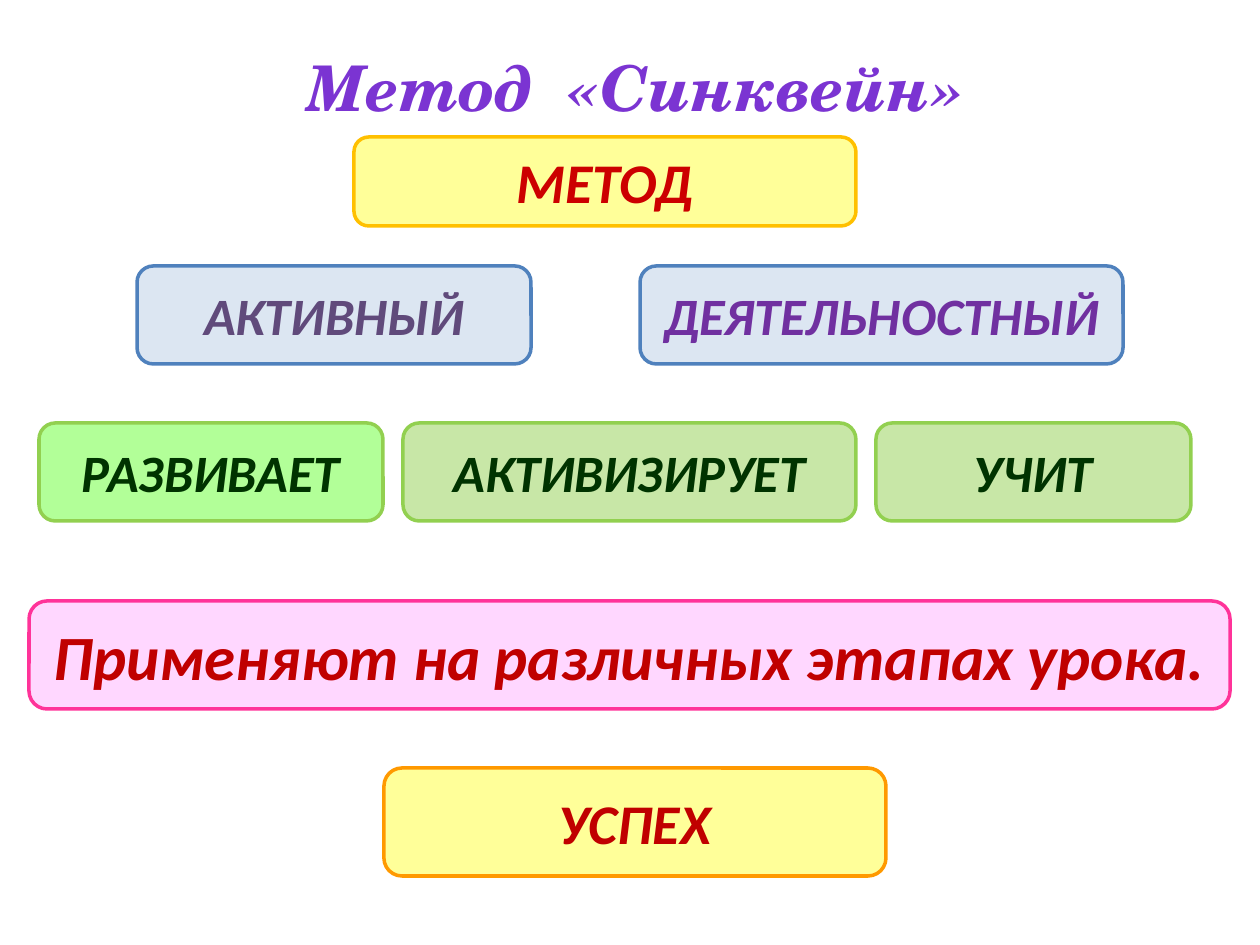
import pptx
import pptx.util
import pptx.dml.color
import pptx.enum.shapes
import pptx.enum.text
import lxml.etree

PX = 914400 / 126
A = "{http://schemas.openxmlformats.org/drawingml/2006/main}"


def px(n):
    return pptx.util.Emu(round(n * PX))


def rgb(value):
    return pptx.dml.color.RGBColor.from_string(value)


def write(tf, text, size, color, font):
    p = tf.paragraphs[0]
    p.alignment = pptx.enum.text.PP_ALIGN.CENTER
    r = p.add_run()
    r.text = text
    r.font.name = font
    r.font.size = pptx.util.Pt(size)
    r.font.bold = True
    r.font.italic = True
    r.font.color.rgb = rgb(color)


def set_title(s, x, y, w, h, text):
    sp = s.shapes.title
    sp.left, sp.top, sp.width, sp.height = px(x), px(y), px(w), px(h)
    tf = sp.text_frame
    tf.word_wrap = True
    tf.margin_top = 0
    tf.vertical_anchor = pptx.enum.text.MSO_ANCHOR.TOP
    write(tf, text, 36, "7B34D2", "TeX Gyre Schola")


def add_box(s, x, y, w, h, text, size, color, fill, line, alpha=100):
    sp = s.shapes.add_shape(
        pptx.enum.shapes.MSO_SHAPE.ROUNDED_RECTANGLE, px(x), px(y), px(w), px(h))
    sp.shadow.inherit = False
    sp.fill.solid()
    sp.fill.fore_color.rgb = rgb(fill)
    if alpha < 100:
        clr = sp._element.spPr.find(f"{A}solidFill/{A}srgbClr")
        lxml.etree.SubElement(clr, A + "alpha", val=str(alpha * 1000))
    sp.line.color.rgb = rgb(line)
    sp.line.width = pptx.util.Pt(2)
    tf = sp.text_frame
    tf.word_wrap = True
    tf.vertical_anchor = pptx.enum.text.MSO_ANCHOR.MIDDLE
    write(tf, text, size, color, "Calibri")


def add_row(s, x, y, gap, line, boxes):
    for text, w, color, fill, alpha in boxes:
        add_box(s, x, y, w, 98, text, 30, color, fill, line, alpha)
        x += w + gap


def main():
    prs = pptx.Presentation()
    prs.slide_width, prs.slide_height = px(1260), px(945)
    s = prs.slides.add_slide(prs.slide_layouts[5])
    set_title(s, 34, 48, 1201, 139, "Метод  «Синквейн»")
    add_box(s, 354, 137, 502, 89, "МЕТОД", 32, "CC0000", "FFFF99", "FFC000")
    add_row(s, 137, 266, 109, "4F81BD", [
        ("АКТИВНЫЙ", 394, "604A7B", "DCE6F2", 100),
        ("ДЕЯТЕЛЬНОСТНЫЙ", 483, "7030A0", "DCE6F2", 100),
    ])
    add_row(s, 39, 423, 20, "92D050", [
        ("РАЗВИВАЕТ", 344, "003300", "66FF33", 50),
        ("АКТИВИЗИРУЕТ", 453, "003300", "92D050", 50),
        ("УЧИТ", 315, "003300", "92D050", 50),
    ])
    add_box(s, 29, 601, 1201, 108, "Применяют на различных этапах урока.",
            36, "C00000", "FFCCFF", "FF3399", 77)
    add_box(s, 384, 768, 502, 108, "УСПЕХ", 32, "C00000", "FFFF99", "FF9900")
    prs.save("out.pptx")


if __name__ == "__main__":
    main()
